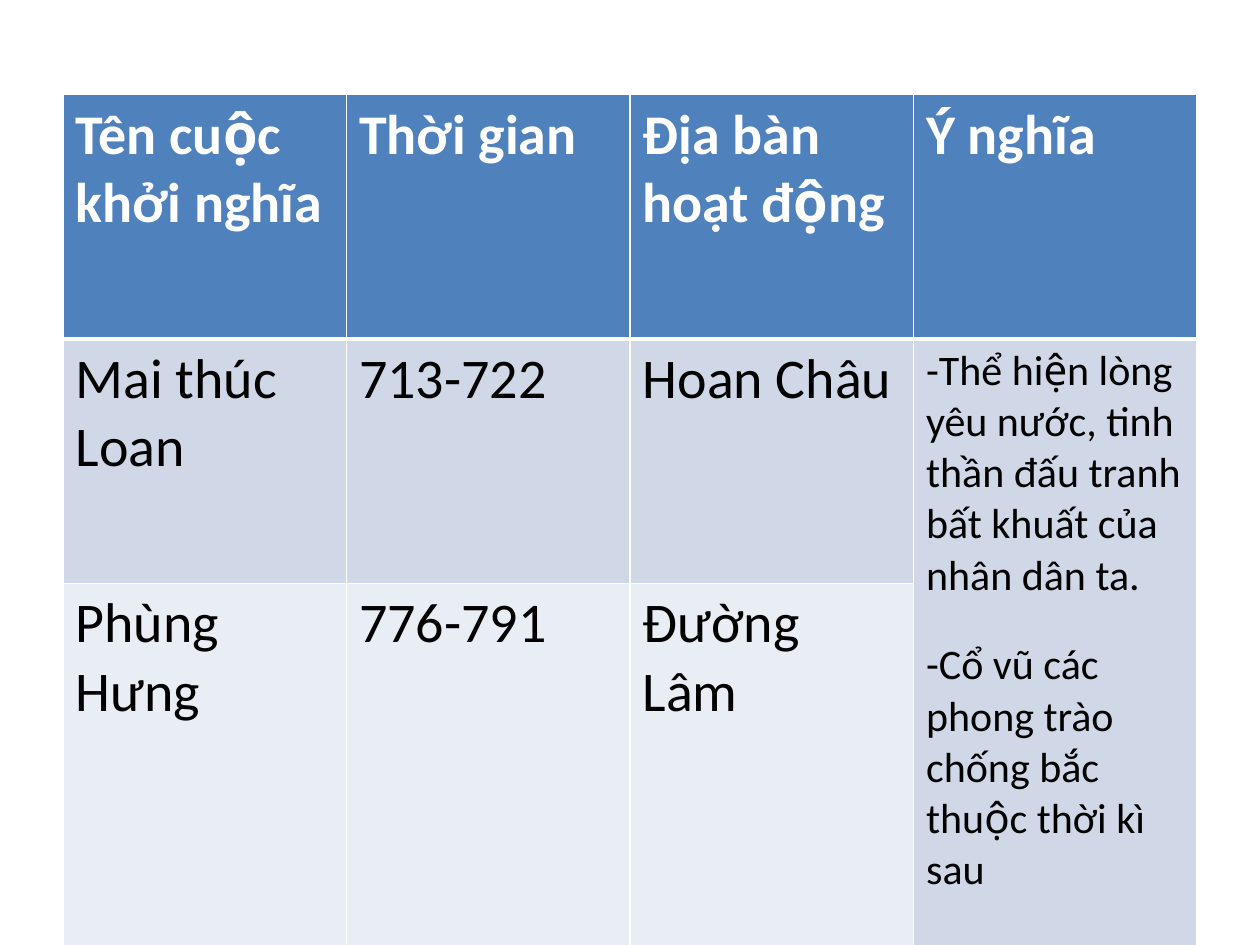
from lxml import etree
from pptx import Presentation
from pptx.dml.color import RGBColor
from pptx.oxml.ns import qn
from pptx.util import Inches, Pt

HEADINGS = ["Tên cuộc khởi nghĩa", "Thời gian", "Địa bàn hoạt động", "Ý nghĩa"]
UPRISINGS = [
    ["Mai thúc Loan", "713-722", "Hoan Châu"],
    ["Phùng Hưng", "776-791", "Đường Lâm"],
]
MEANINGS = [
    "Thể hiện lòng yêu nước, tinh thần đấu tranh bất khuất của nhân dân ta.",
    "Cổ vũ các phong trào chống bắc thuộc thời kì sau",
]
THEME = {
    "font": "Calibri", "size": 32, "meaning_size": 24, "meaning_gap": 22,
    "header": "4F81BD", "bands": ["D0D8E8", "E9EDF4"],
    "header_text": "FFFFFF", "text": "000000",
    "border": "FFFFFF", "border_width": 1, "header_rule": 3,
}
LEFT, TOP, COLUMN_WIDTH = 0.5, 0.75, 2.25
ROW_HEIGHTS = [1.94, 1.94, 3.18]
# Vietnamese tone marks are stored as separate combining characters.
TONES = {
    "\N{COMBINING GRAVE ACCENT}": ("àằầèềìòồờùừỳ", "aăâeêioôơuưy"),
    "\N{COMBINING ACUTE ACCENT}": ("áắấéếíóốớúứý", "aăâeêioôơuưy"),
    "\N{COMBINING TILDE}": ("ãẵẫẽễĩõỗỡũữỹ", "aăâeêioôơuưy"),
    "\N{COMBINING HOOK ABOVE}": ("ảẳẩẻểỉỏổởủửỷ", "aăâeêioôơuưy"),
    "\N{COMBINING DOT BELOW}": ("ạặậẹệịọộợụựỵ", "aăâeêioôơuưy"),
}
SPLIT_LETTERS = {
    ord(change(letter)): change(base) + tone
    for tone, (letters, bases) in TONES.items()
    for letter, base in zip(letters, bases)
    for change in (str.lower, str.upper)
}


def split_tones(words):
    return words.translate(SPLIT_LETTERS)


def set_borders(cell, bottom, top):
    properties = cell._tc.get_or_add_tcPr()
    widths = {"lnL": THEME["border_width"], "lnR": THEME["border_width"],
              "lnT": top, "lnB": bottom}
    for position, (side, width) in enumerate(widths.items()):
        line = etree.Element(qn(f"a:{side}"), w=str(Pt(width)))
        fill = etree.SubElement(line, qn("a:solidFill"))
        etree.SubElement(fill, qn("a:srgbClr"), val=THEME["border"])
        properties.insert(position, line)


def add_dash(paragraph):
    properties = paragraph._p.get_or_add_pPr()
    properties.set("marL", "0")
    properties.set("indent", "0")
    etree.SubElement(properties, qn("a:buFont"), typeface=THEME["font"])
    etree.SubElement(properties, qn("a:buChar"), char="-")


def format_text(cell, size, color, bold):
    for paragraph in cell.text_frame.paragraphs:
        for run in paragraph.runs:
            run.font.name = THEME["font"]
            run.font.size = Pt(size)
            run.font.bold = bold
            run.font.color.rgb = RGBColor.from_string(color)


def fill_cell(cell, row):
    is_header = row == 0
    color = THEME["header"] if is_header else THEME["bands"][row - 1]
    cell.fill.solid()
    cell.fill.fore_color.rgb = RGBColor.from_string(color)
    thin, thick = THEME["border_width"], THEME["header_rule"]
    set_borders(cell, bottom=thick if is_header else thin,
                top=thick if row == 1 else thin)


def write_meanings(cell):
    cell.text_frame.text = split_tones("\n".join(MEANINGS))
    for index, paragraph in enumerate(cell.text_frame.paragraphs):
        add_dash(paragraph)
        if index:
            paragraph.space_before = Pt(THEME["meaning_gap"])
    format_text(cell, THEME["meaning_size"], THEME["text"], False)


def main():
    deck = Presentation()
    deck.slide_width, deck.slide_height = Inches(10), Inches(7.5)
    slide = deck.slides.add_slide(deck.slide_layouts[6])
    rows = [HEADINGS] + UPRISINGS
    table = slide.shapes.add_table(
        len(rows), len(HEADINGS), Inches(LEFT), Inches(TOP),
        Inches(COLUMN_WIDTH * len(HEADINGS)), Inches(sum(ROW_HEIGHTS))).table
    for column in table.columns:
        column.width = Inches(COLUMN_WIDTH)
    for row, height in enumerate(ROW_HEIGHTS):
        table.rows[row].height = Inches(height)
        for cell in table.rows[row].cells:
            fill_cell(cell, row)
        color = THEME["text"] if row else THEME["header_text"]
        for column, words in enumerate(rows[row]):
            cell = table.cell(row, column)
            cell.text_frame.text = split_tones(words)
            format_text(cell, THEME["size"], color, row == 0)

    last = len(HEADINGS) - 1
    meaning = table.cell(1, last)
    meaning.merge(table.cell(len(UPRISINGS), last))
    write_meanings(meaning)
    deck.save("out.pptx")


if __name__ == "__main__":
    main()
